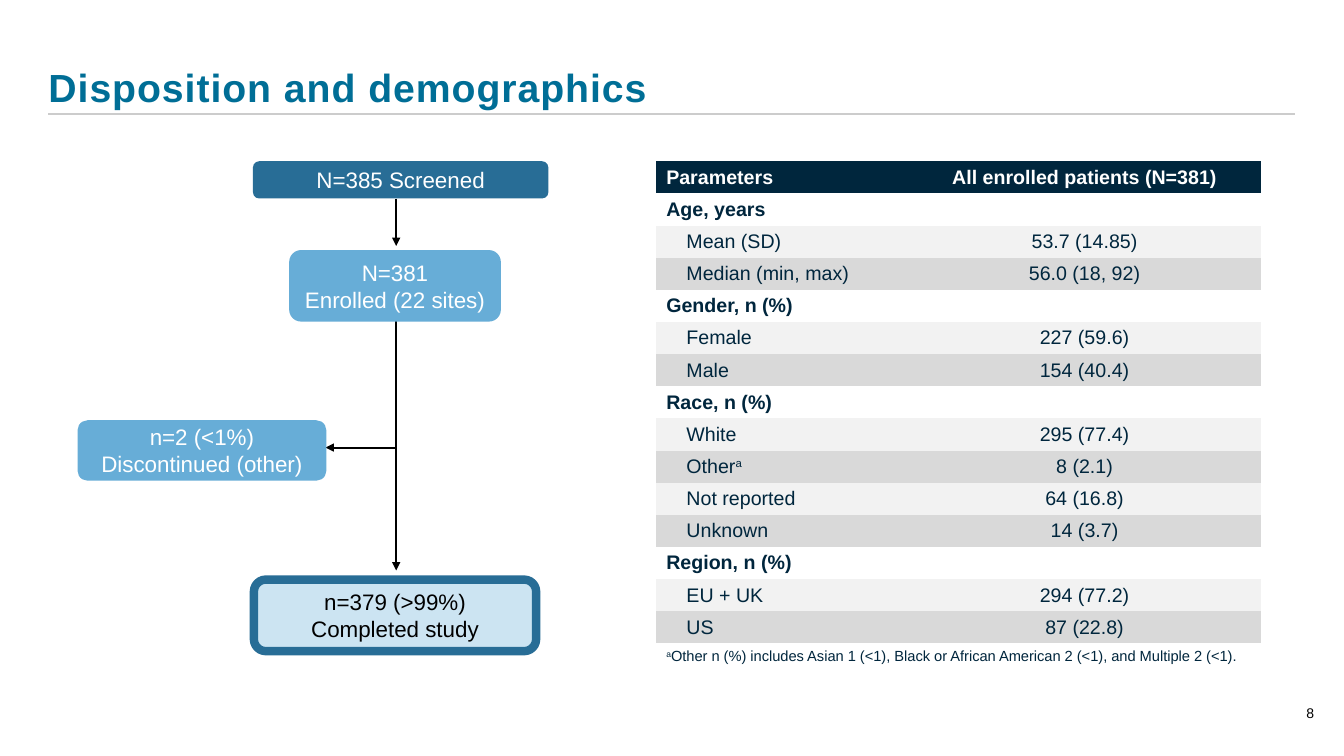
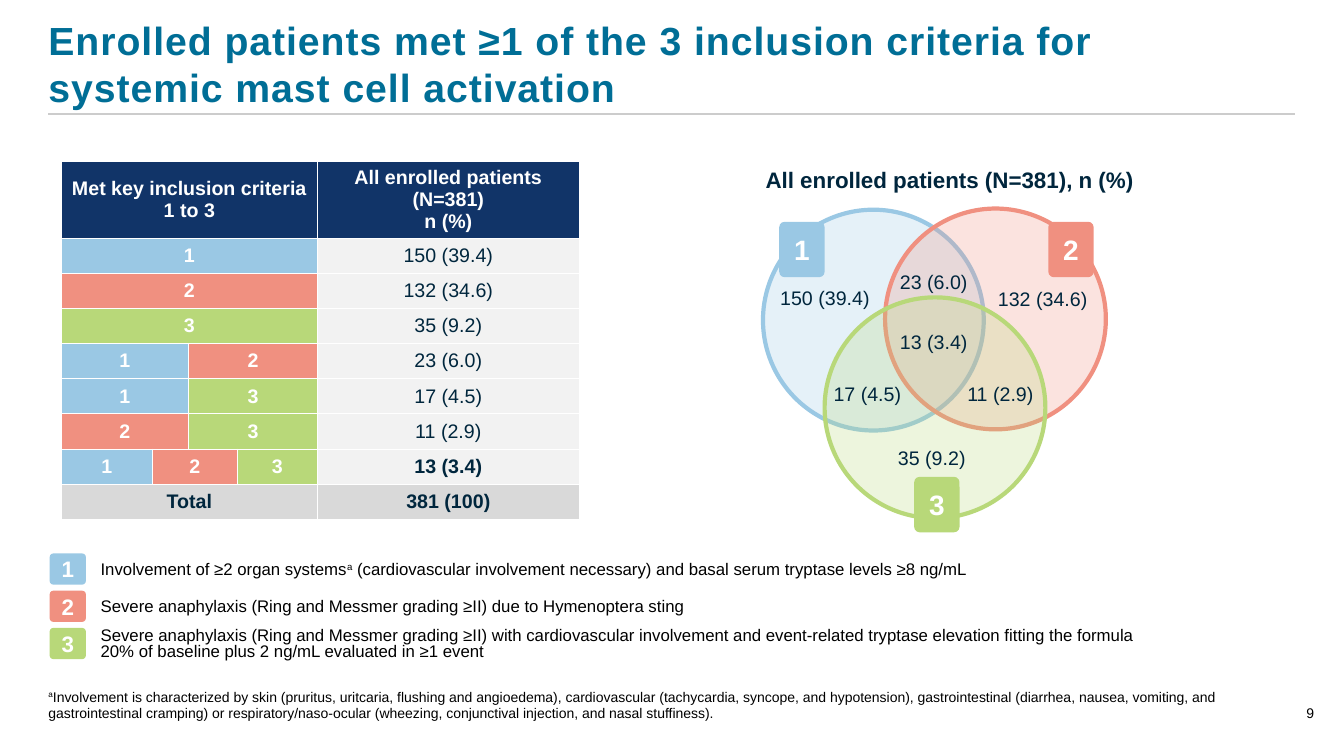
from dataclasses import dataclass
from typing import Any

from lxml import etree
from pptx import Presentation
from pptx.dml.color import RGBColor
from pptx.enum import shapes, text
from pptx.oxml import ns
from pptx.util import Pt

COLORS = {
    "title": "006E96",
    "rule": "CCCCCC",
    "navy": "00263D",
    "header": "113468",
    "steel": "286D96",
    "sky": "67ADD7",
    "pale": "CCE4F2",
    "light": "F2F2F2",
    "grey": "D9D9D9",
    "white": "FFFFFF",
    "black": "000000",
    "1": "9AC8E4",
    "2": "F09080",
    "3": "B8D879",
}
LEFT, CENTER = text.PP_ALIGN.LEFT, text.PP_ALIGN.CENTER
TOP, MIDDLE, BOTTOM = text.MSO_ANCHOR.TOP, text.MSO_ANCHOR.MIDDLE, text.MSO_ANCHOR.BOTTOM
ROUNDED = shapes.MSO_SHAPE.ROUNDED_RECTANGLE
NO_TABLE_STYLE = "{2D5ABB26-0587-4C30-8999-92F81FD0307C}"
TABLE_TOP = 115.2


@dataclass(frozen=True)
class Area:
    left: float
    top: float
    width: float
    height: float

    def lengths(self) -> tuple:
        return tuple(Pt(value) for value in (self.left, self.top, self.width, self.height))


@dataclass(frozen=True)
class Style:
    size: float
    color: str = "navy"
    bold: bool = False
    align: Any = LEFT
    anchor: Any = MIDDLE
    inset: tuple = (7.2, 3.6, 7.2, 3.6)
    line_spacing: float = 1.0


@dataclass(frozen=True)
class FlowBox:
    area: Area
    label: str
    fill: str
    color: str = "white"
    border: str = ""


@dataclass(frozen=True)
class Arrow:
    start: tuple
    end: tuple


@dataclass(frozen=True)
class Criterion:
    key: str
    circle: tuple
    badge: tuple
    description: str


@dataclass(frozen=True)
class Label:
    center: tuple
    value: str


TITLE = Style(28, "title", True, anchor=BOTTOM, inset=(0, 3.6, 0, 3.6))
NUMBER = Style(10, "black", align=CENTER, anchor=BOTTOM, inset=(0, 0, 0, 0))
FOOTNOTE = Style(10, "black", anchor=BOTTOM, inset=(0, 0, 0, 0))
HEADING = Style(14, "white", True)
HEADING_CENTER = Style(14, "white", True, CENTER)
SECTION = Style(14, bold=True)
ITEM = Style(14, inset=(21.6, 3.6, 7.2, 3.6))
VALUE = Style(14, align=CENTER)
VALUE_BOLD = Style(14, bold=True, align=CENTER)
TABLE_NOTE = Style(10.5)
VENN_TITLE = Style(16, bold=True, align=CENTER, anchor=TOP)
VENN_LABEL = Style(14, align=CENTER, inset=(0, 0, 0, 0))
LEGEND = Style(12, "black", line_spacing=0.8)

FLOW_BOXES = (
    FlowBox(Area(180.7, 115.2, 211, 26.6), "N=385 Screened", "steel"),
    FlowBox(Area(206.6, 178.6, 151.2, 51.1), "N=381\nEnrolled (22 sites)", "sky"),
    FlowBox(Area(55.4, 300.2, 177.8, 43.2), "n=2 (<1%) Discontinued (other)", "sky"),
    FlowBox(Area(181.4, 414, 201.6, 51.1), "n=379 (>99%)\nCompleted study", "pale", "black", "steel"),
)
FLOW_ARROWS = (
    Arrow((283, 141.8), (283, 175.7)),
    Arrow((283, 208.8), (283, 407.5)),
    Arrow((283, 319.7), (232.6, 319.7)),
)
DEMOGRAPHICS = {
    "Age, years": (("Mean (SD)", "53.7 (14.85)"), ("Median (min, max)", "56.0 (18, 92)")),
    "Gender, n (%)": (("Female", "227 (59.6)"), ("Male", "154 (40.4)")),
    "Race, n (%)": (("White", "295 (77.4)"), ("Other^a^", "8 (2.1)"),
                    ("Not reported", "64 (16.8)"), ("Unknown", "14 (3.7)")),
    "Region, n (%)": (("EU + UK", "294 (77.2)"), ("US", "87 (22.8)")),
}
CRITERIA_COUNTS = (
    ("1", "150 (39.4)"), ("2", "132 (34.6)"), ("3", "35 (9.2)"), ("12", "23 (6.0)"),
    ("13", "17 (4.5)"), ("23", "11 (2.9)"), ("123", "13 (3.4)"),
)
CRITERIA_SPANS = {1: ((0, 3),), 2: ((0, 1), (2, 3)), 3: ((0, 0), (1, 2), (3, 3))}
CRITERIA = (
    Criterion("1", (545, 149.8), (556.6, 158.4),
              "Involvement of ≥2 organ systems^a^ (cardiovascular involvement necessary) "
              "and basal serum tryptase levels ≥8 ng/mL"),
    Criterion("2", (632.2, 149), (748.8, 158.4),
              "Severe anaphylaxis (Ring and Messmer grading ≥II) due to Hymenoptera sting"),
    Criterion("3", (589, 212.4), (653, 340.6),
              "Severe anaphylaxis (Ring and Messmer grading ≥II) with cardiovascular involvement and "
              "event-related tryptase elevation fitting the formula\n"
              "20% of baseline plus 2 ng/mL evaluated in ≥1 event"),
)
VENN_LABELS = (
    Label((667, 244), "13 (3.4)"), Label((667, 201), "23 (6.0)"),
    Label((619.6, 281.5), "17 (4.5)"), Label((714.6, 281.5), "11 (2.9)"),
    Label((589.3, 212.4), "150 (39.4)"), Label((744.8, 213), "132 (34.6)"),
    Label((665.6, 327), "35 (9.2)"),
)


def rgb(name: str) -> RGBColor:
    return RGBColor.from_string(COLORS[name])


def apply(target: Any, formats: dict) -> None:
    for name, value in formats.items():
        setattr(target, name, value)


def paint(fill: Any, color: str) -> None:
    fill.solid()
    fill.fore_color.rgb = rgb(color)


def margins(style: Style) -> dict:
    names = ("margin_left", "margin_top", "margin_right", "margin_bottom")
    return {name: Pt(value) for name, value in zip(names, style.inset)}


def write(frame: Any, content: str, style: Style) -> None:
    paragraph = frame.paragraphs[0]
    apply(paragraph, {"alignment": style.align, "line_spacing": style.line_spacing})
    for line_index, line in enumerate(content.split("\n")):
        if line_index:
            paragraph.add_line_break()
        for part_index, part in enumerate(line.split("^")):
            if not part:
                continue
            run = paragraph.add_run()
            run.text = part
            apply(run.font, {"name": "Arial", "size": Pt(style.size), "bold": style.bold})
            run.font.color.rgb = rgb(style.color)
            if part_index % 2:
                run.font._element.set("baseline", "30000")


def write_shape(shape: Any, content: str, style: Style) -> None:
    frame = shape.text_frame
    apply(frame, {"word_wrap": True, "auto_size": text.MSO_AUTO_SIZE.NONE,
                  "vertical_anchor": style.anchor, **margins(style)})
    write(frame, content, style)


def add_text(slide: Any, area: Area, content: str, style: Style) -> None:
    write_shape(slide.shapes.add_textbox(*area.lengths()), content, style)


def add_shape(slide: Any, kind: Any, area: Area, fill: str, border: str = "", width: float = 0) -> Any:
    shape = slide.shapes.add_shape(kind, *area.lengths())
    shape.shadow.inherit = False
    paint(shape.fill, fill)
    if border:
        paint(shape.line.fill, border)
        shape.line.width = Pt(width)
    else:
        shape.line.fill.background()
    return shape


def add_line(slide: Any, line: Arrow, color: str, width: float, arrow: bool = False) -> None:
    points = (Pt(value) for value in (*line.start, *line.end))
    connector = slide.shapes.add_connector(shapes.MSO_CONNECTOR.STRAIGHT, *points)
    connector.line.width = Pt(width)
    paint(connector.line.fill, color)
    if arrow:
        etree.SubElement(connector.line._get_or_add_ln(), ns.qn("a:tailEnd"), type="triangle")
    etree.SubElement(connector._element.spPr, ns.qn("a:effectLst"))


def add_badge(slide: Any, area: Area, key: str, size: float) -> None:
    badge = add_shape(slide, ROUNDED, area, key)
    badge.adjustments[0] = 0.12
    write_shape(badge, key, Style(size, "white", True, CENTER, inset=(0, 0, 0, 0)))


def add_table(slide: Any, left: float, columns: tuple, rows: tuple) -> Any:
    area = Area(left, TABLE_TOP, sum(columns), sum(rows))
    table = slide.shapes.add_table(len(rows), len(columns), *area.lengths()).table
    apply(table, {"first_row": False, "horz_banding": False})
    table._tbl.tblPr.find(ns.qn("a:tableStyleId")).text = NO_TABLE_STYLE
    for column, width in zip(table.columns, columns):
        column.width = Pt(width)
    for row, height in zip(table.rows, rows):
        row.height = Pt(height)
    for cell in table.iter_cells():
        etree.SubElement(cell.text_frame.paragraphs[0]._p, ns.qn("a:endParaRPr"), sz="1000")
    return table


def fill_cell(table: Any, row: int, span: tuple, content: str, style: Style, fill: str,
              border: bool = False) -> None:
    first, last = span
    cell = table.cell(row, first)
    if last > first:
        cell.merge(table.cell(row, last))
    apply(cell, {"vertical_anchor": style.anchor, **margins(style)})
    write(cell.text_frame, content, style)
    for column in range(first, last + 1):
        part = table.cell(row, column)
        paint(part.fill, fill)
        if border:
            properties = part._tc.get_or_add_tcPr()
            for index, side in enumerate(("lnL", "lnR", "lnT", "lnB")):
                line = etree.Element(ns.qn(f"a:{side}"), w=str(Pt(0.75)))
                solid = etree.SubElement(line, ns.qn("a:solidFill"))
                etree.SubElement(solid, ns.qn("a:srgbClr"), val=COLORS["white"])
                properties.insert(index, line)


def add_slide(presentation: Any, title: str, number: int) -> Any:
    slide = presentation.slides.add_slide(presentation.slide_layouts[5])
    add_line(slide, Arrow((34.6, 81.4), (925.2, 81.4)), "rule", 1)
    names = ("left", "top", "width", "height")
    apply(slide.shapes.title, dict(zip(names, Area(34.6, 23.8, 890, 59).lengths())))
    write_shape(slide.shapes.title, title, TITLE)
    for run in slide.shapes.title.text_frame.paragraphs[0].runs:
        run.font._element.set("spc", "70")
    add_text(slide, Area(918, 486.7, 36, 28.8), str(number), NUMBER)
    return slide


def build_disposition(presentation: Any) -> None:
    slide = add_slide(presentation, "Disposition and demographics", 8)
    for arrow in FLOW_ARROWS:
        add_line(slide, arrow, "black", 1.5, True)
    for box in FLOW_BOXES:
        shape = add_shape(slide, ROUNDED, box.area, box.fill, box.border, 6)
        write_shape(shape, box.label, Style(16, box.color, align=CENTER))

    table = add_table(slide, 468.7, (180, 252), (22.95,) * 15 + (19,))
    fill_cell(table, 0, (0, 0), "Parameters", HEADING, "navy")
    fill_cell(table, 0, (1, 1), "All enrolled patients (N=381)", HEADING_CENTER, "navy")
    row = 1
    for section, items in DEMOGRAPHICS.items():
        fill_cell(table, row, (0, 1), section, SECTION, "white")
        for index, (name, value) in enumerate(items):
            row += 1
            fill = ("light", "grey")[index % 2]
            fill_cell(table, row, (0, 0), name, ITEM, fill)
            fill_cell(table, row, (1, 1), value, VALUE, fill)
        row += 1
    note = "^a^Other n (%) includes Asian 1 (<1), Black or African American 2 (<1), and Multiple 2 (<1)."
    fill_cell(table, row, (0, 1), note, TABLE_NOTE, "white")


def build_criteria(presentation: Any) -> None:
    title = "Enrolled patients met ≥1 of the 3 inclusion criteria for\nsystemic mast cell activation"
    slide = add_slide(presentation, title, 9)
    table = add_table(slide, 43.7, (65.3, 25.7, 34.7, 57.5, 186.8), (55,) + (25.1,) * 8)
    fill_cell(table, 0, (0, 3), "Met key inclusion criteria\n1 to 3", HEADING_CENTER, "header", True)
    fill_cell(table, 0, (4, 4), "All enrolled patients\n(N=381)\nn (%)", HEADING_CENTER, "header", True)
    for row, (keys, value) in enumerate(CRITERIA_COUNTS, 1):
        for key, span in zip(keys, CRITERIA_SPANS[len(keys)]):
            fill_cell(table, row, span, key, HEADING_CENTER, key, True)
        fill_cell(table, row, (4, 4), value, VALUE_BOLD if len(keys) == 3 else VALUE, "light", True)
    for span, value in (((0, 3), "Total"), ((4, 4), "381 (100)")):
        fill_cell(table, 8, span, value, VALUE_BOLD, "grey", True)

    add_text(slide, Area(502.6, 115.2, 351.4, 26.6), "All enrolled patients (N=381), n (%)", VENN_TITLE)
    for criterion in CRITERIA:
        area = Area(*criterion.circle, 157.7, 157.7)
        circle = add_shape(slide, shapes.MSO_SHAPE.OVAL, area, criterion.key, criterion.key, 3)
        color = circle._element.spPr.find(ns.qn("a:solidFill"))[0]
        etree.SubElement(color, ns.qn("a:alpha"), val="25000")
    for label in VENN_LABELS:
        x, y = label.center
        add_text(slide, Area(x - 50, y - 10.8, 100, 21.6), label.value, VENN_LABEL)
    for index, criterion in enumerate(CRITERIA):
        add_badge(slide, Area(*criterion.badge, 32.4, 39.6), criterion.key, 20)
        top = 395.3 + 26.6 * index
        add_badge(slide, Area(35.5, top, 25.9, 22.3), criterion.key, 16)
        add_text(slide, Area(64.8, top, 848, 24), criterion.description, LEGEND)
    footnote = (
        "^a^Involvement is characterized by skin (pruritus, uritcaria, flushing and angioedema), "
        "cardiovascular (tachycardia, syncope, and hypotension), gastrointestinal (diarrhea, nausea, "
        "vomiting, and gastrointestinal cramping) or respiratory/naso-ocular (wheezing, conjunctival "
        "injection, and nasal stuffiness)."
    )
    add_text(slide, Area(34.6, 475.9, 882.7, 39.6), footnote, FOOTNOTE)


def main() -> None:
    presentation = Presentation()
    apply(presentation, {"slide_width": Pt(960), "slide_height": Pt(540)})
    build_disposition(presentation)
    build_criteria(presentation)
    presentation.save("out.pptx")


if __name__ == "__main__":
    main()
